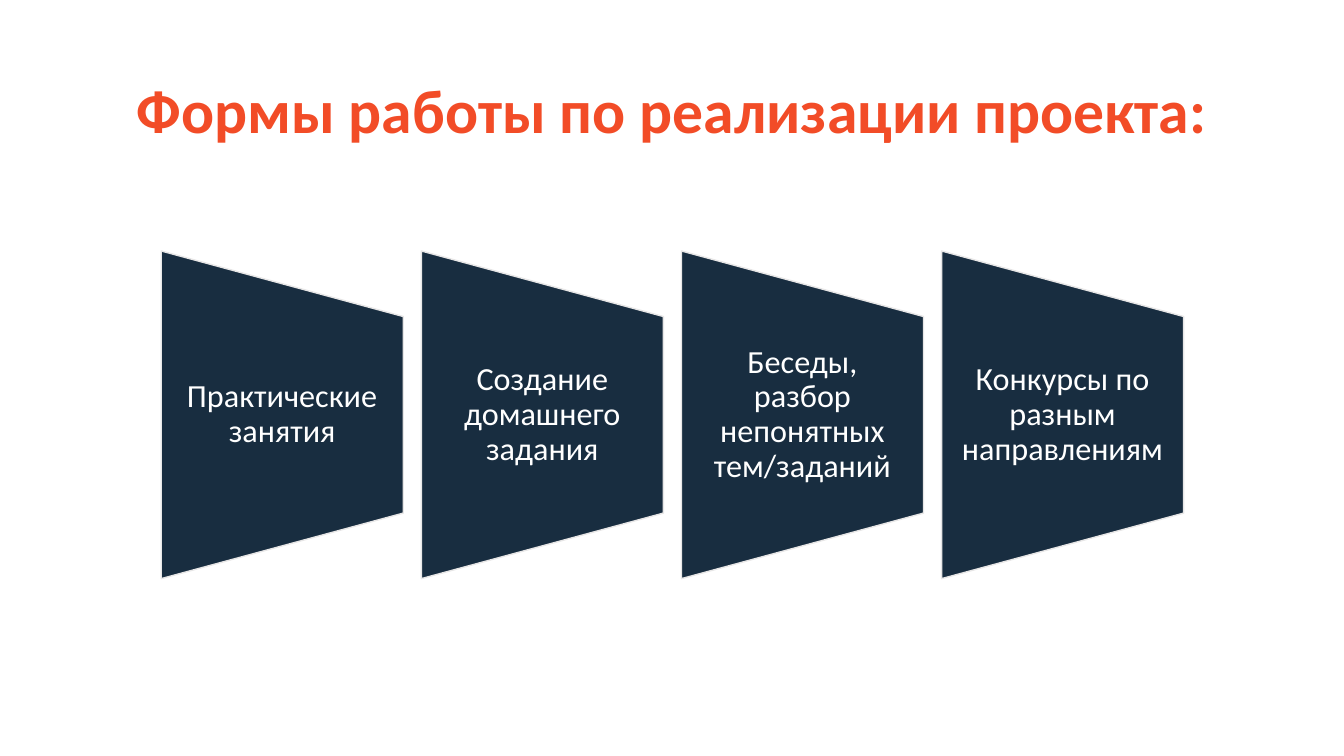
from pptx import Presentation
from pptx.dml.color import RGBColor
from pptx.enum.shapes import MSO_SHAPE
from pptx.enum.text import MSO_ANCHOR, PP_ALIGN
from pptx.util import Inches, Pt

TRAPEZOID = MSO_SHAPE.FLOWCHART_MANUAL_OPERATION
MIDDLE = MSO_ANCHOR.MIDDLE
CENTER = PP_ALIGN.CENTER

TITLE = "Формы работы по реализации проекта:"
FORMS = [
    "Практические занятия",
    "Создание домашнего задания",
    "Беседы, разбор непонятных тем/заданий",
    "Конкурсы по разным направлениям",
]


def color(value):
    return RGBColor.from_string(value)


def add_text(s, text, left, top, width, height, size, fill, bold=False, inset=(0.1, 0.05)):
    tf = s.shapes.add_textbox(Inches(left), Inches(top), Inches(width), Inches(height)).text_frame
    tf.word_wrap = True
    tf.vertical_anchor = MIDDLE
    tf.margin_left = tf.margin_right = Inches(inset[0])
    tf.margin_top = tf.margin_bottom = Inches(inset[1])
    p = tf.paragraphs[0]
    p.text = text
    p.alignment = CENTER
    p.line_spacing = 0.9
    p.font.name = "Calibri"
    p.font.size = Pt(size)
    p.font.bold = bold
    p.font.color.rgb = color(fill)


def add_card(s, text, left, top, width, height):
    sp = s.shapes.add_shape(
        TRAPEZOID,
        Inches(left + (width - height) / 2),
        Inches(top + (height - width) / 2),
        Inches(height),
        Inches(width),
    )
    sp.rotation = 270
    sp.shadow.inherit = False
    sp.fill.solid()
    sp.fill.fore_color.rgb = color("182D40")
    sp.line.color.rgb = color("E7E6E6")
    sp.line.width = Pt(1)
    add_text(s, text, left, top + height / 5, width, height * 0.6, 23, "FFFFFF", inset=(0.16, 0))


def add_cards(s, left, top, width, height, gap):
    card_width = (width - gap * (len(FORMS) - 1)) / len(FORMS)
    for i, text in enumerate(FORMS):
        add_card(s, text, left + i * (card_width + gap), top, card_width, height)


def main():
    prs = Presentation()
    prs.slide_width = Inches(13.33)
    prs.slide_height = Inches(7.5)
    s = prs.slides.add_slide(prs.slide_layouts[6])
    add_text(s, TITLE, 0.92, 0.4, 11.5, 1.45, 44, "F24C27", bold=True)
    add_cards(s, 1.6, 2.49, 10.14, 3.25, 0.18)
    prs.save("out.pptx")


if __name__ == "__main__":
    main()
